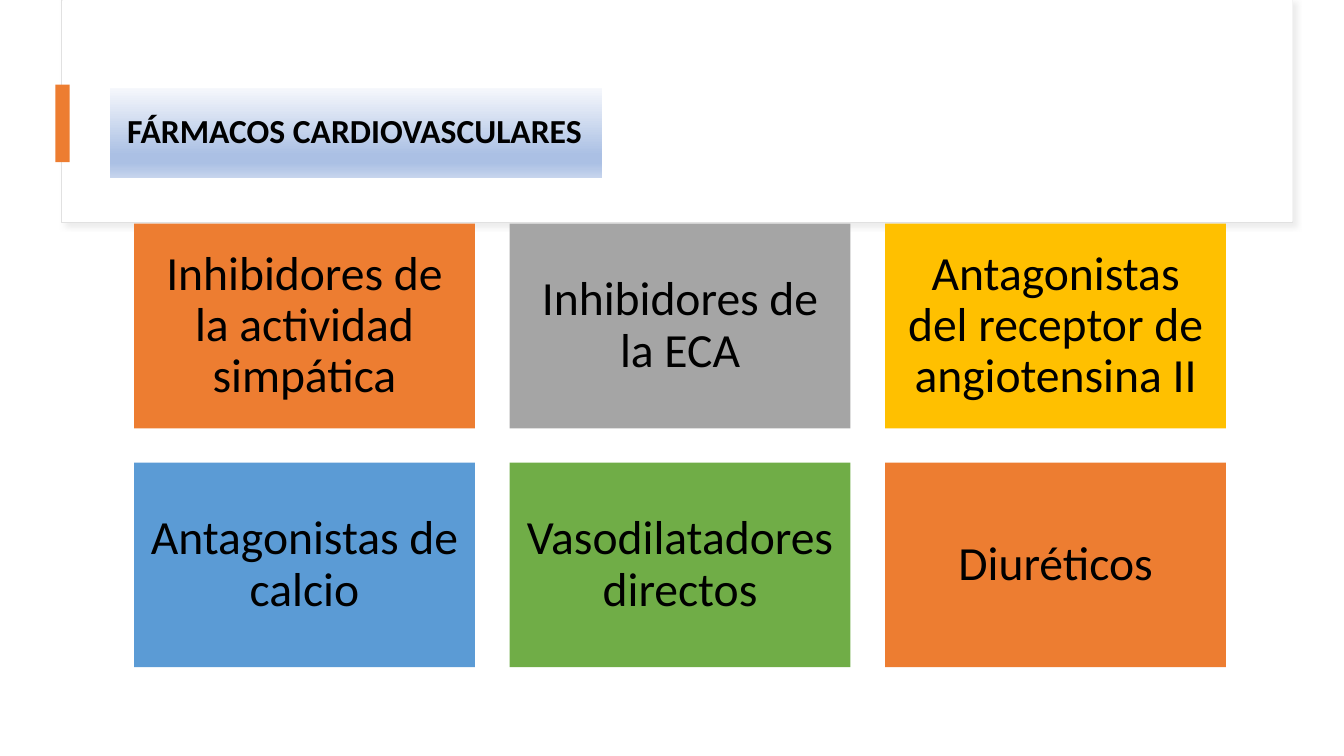
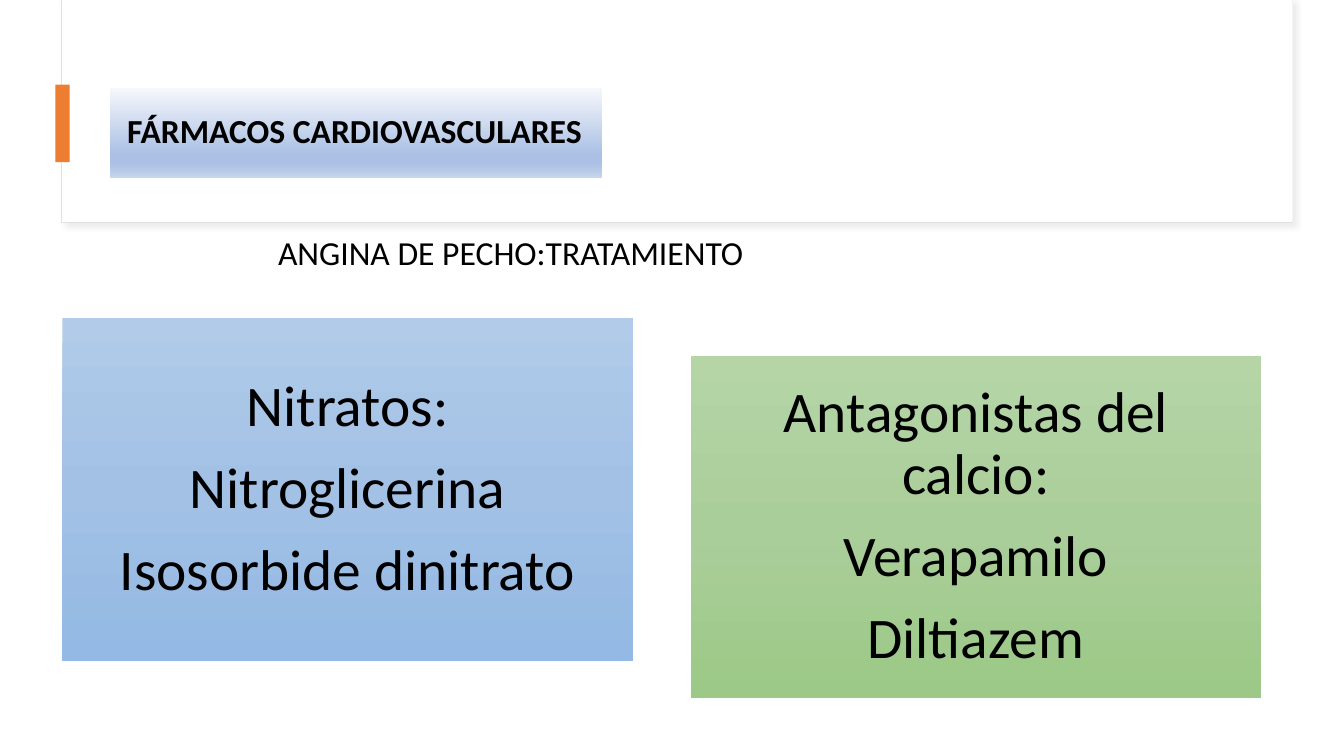
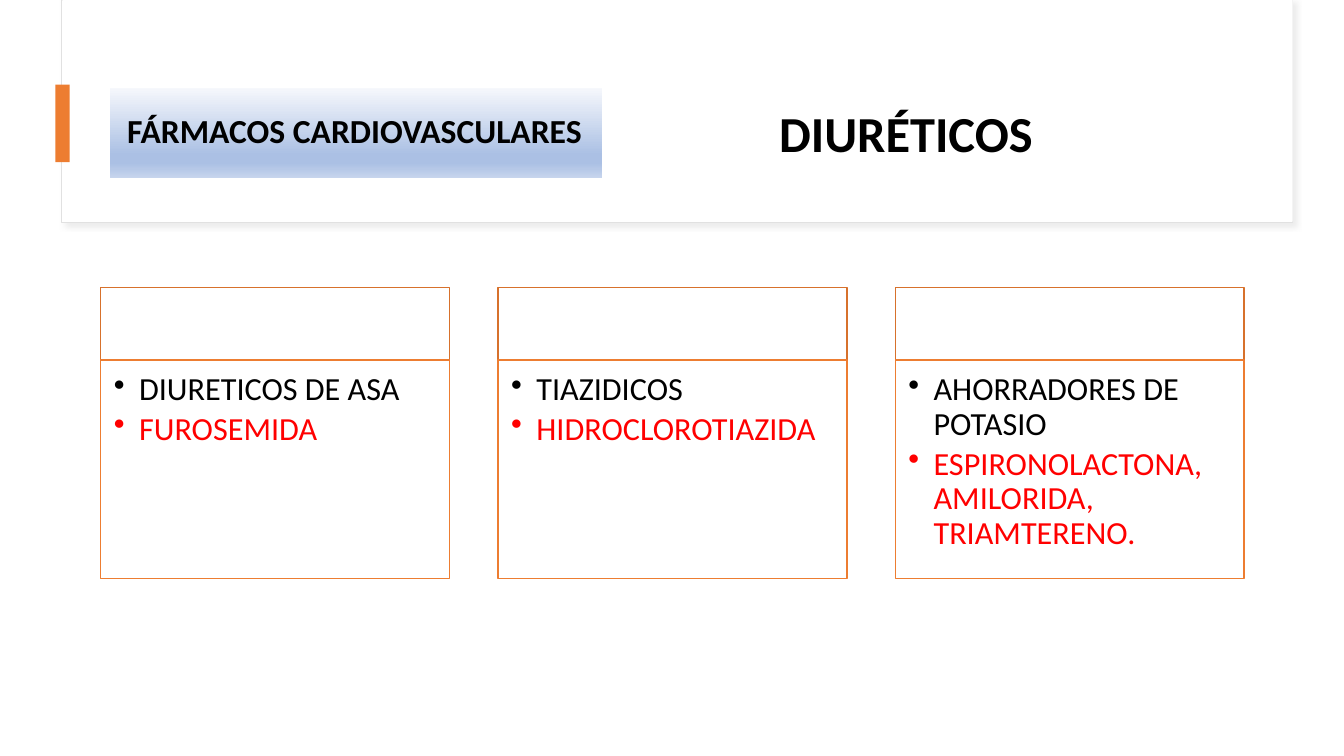
from dataclasses import dataclass
from itertools import cycle

from lxml import etree
from pptx import Presentation
from pptx import util as u
from pptx.dml.color import RGBColor
from pptx.enum import shapes, text
from pptx.oxml.ns import qn


@dataclass(frozen=True)
class Theme:
    font: str = "Calibri"
    black: str = "000000"
    white: str = "FFFFFF"
    red: str = "FF0000"
    orange: str = "ED7D31"
    rust: str = "D7712C"
    gray: str = "A5A5A5"
    gold: str = "FFC000"
    blue: str = "5B9BD5"
    green: str = "70AD47"
    band_line: str = "E1E1E1"
    band_shadow: str = "D9D9D9"
    # Gradients run from top to bottom as (percent, colour)
    title_fade: tuple = ((0, "F6F8FC"), (74, "ABC0E4"), (83, "ABC0E4"), (100, "C7D5ED"))
    blue_fade: tuple = ((0, "B1CBE9"), (50, "A3C1E5"), (100, "93B9E4"))
    green_fade: tuple = ((0, "B5D5A7"), (50, "AACE9A"), (100, "9CC987"))
    heading_size: int = 36
    label_size: int = 24
    tile_size: int = 34
    panel_size: int = 41
    list_size: int = 23


THEME = Theme()
LEFT, CENTER = text.PP_ALIGN.LEFT, text.PP_ALIGN.CENTER
TOP, MIDDLE = text.MSO_ANCHOR.TOP, text.MSO_ANCHOR.MIDDLE


def spread(first, last, count):
    """Evenly spaced positions from first to last."""
    return [first + (last - first) * i / (count - 1) for i in range(count)]


def write(frame, content, size=THEME.label_size, colors=(THEME.black,), bold=False,
          align=LEFT, anchor=TOP, insets=(0.1, 0.05, 0.1, 0.05),
          spacing=1.0, after=0, bullet=None):
    """Fill a frame, one paragraph per line; after is a share of the type size."""
    frame.word_wrap = True
    frame.vertical_anchor = anchor
    (frame.margin_left, frame.margin_top,
     frame.margin_right, frame.margin_bottom) = map(u.Inches, insets)
    for index, (line, color) in enumerate(zip(content.split("\n"), cycle(colors))):
        para = frame.add_paragraph() if index else frame.paragraphs[0]
        para.alignment = align
        para.line_spacing = spacing
        para.space_after = u.Pt(size * after)
        if bullet:
            props = para._p.get_or_add_pPr()
            props.set("marL", str(u.Inches(0.25)))
            props.set("indent", str(-u.Inches(0.25)))
            etree.SubElement(props, qn("a:buChar"), char=bullet)
        span = para.add_run()
        span.text = line
        span.font.name = THEME.font
        span.font.size = u.Pt(size)
        span.font.bold = bold
        span.font.color.rgb = RGBColor.from_string(color)


class Deck:
    def __init__(self, theme):
        self.theme = theme
        self.file = Presentation()
        self.file.slide_width = u.Inches(13.33)
        self.file.slide_height = u.Inches(7.5)
        self.page = None

    def new_page(self):
        """Start a slide with the shared header band and title."""
        t = self.theme
        self.page = self.file.slides.add_slide(self.file.slide_layouts[6])
        band = self.box(0.61, 0, 12.21, 2.21, t.white, line=t.band_line)
        self.cast_shadow(band)
        self.box(0.62, 0, 12.2, 2.2, t.white)
        title = self.box(1.09, 0.87, 4.88, 0.9, t.title_fade)
        write(title.text_frame, "FÁRMACOS CARDIOVASCULARES", bold=True,
              anchor=MIDDLE, spacing=0.9, insets=(0.17, 0.05, 0.1, 0.05))
        self.box(0.55, 0.84, 0.14, 0.77, t.orange)

    def box(self, left, top, width, height, fill, line=None):
        """Rectangle with a plain colour or a gradient given as stops."""
        box = self.page.shapes.add_shape(
            shapes.MSO_SHAPE.RECTANGLE, *map(u.Inches, (left, top, width, height)))
        box.shadow.inherit = False
        if isinstance(fill, str):
            box.fill.solid()
            box.fill.fore_color.rgb = RGBColor.from_string(fill)
        else:
            self.fade(box, fill)
        if line:
            box.line.color.rgb = RGBColor.from_string(line)
            box.line.width = u.Pt(1)
        else:
            box.line.fill.background()
        return box

    def fade(self, box, stops):
        box.fill.gradient()
        box.fill.gradient_angle = 270
        stop_list = box._element.spPr.find(qn("a:gradFill")).find(qn("a:gsLst"))
        for old in list(stop_list):
            stop_list.remove(old)
        for percent, color in stops:
            stop = etree.SubElement(stop_list, qn("a:gs"), pos=str(percent * 1000))
            etree.SubElement(stop, qn("a:srgbClr"), val=color)

    def cast_shadow(self, box):
        effects = box._element.spPr.find(qn("a:effectLst"))
        shadow = etree.SubElement(
            effects, qn("a:outerShdw"), blurRad=str(u.Pt(4)), dist=str(u.Pt(3)),
            dir=str(45 * 60000), algn="tl", rotWithShape="0")
        color = etree.SubElement(shadow, qn("a:srgbClr"), val=self.theme.band_shadow)
        etree.SubElement(color, qn("a:alpha"), val="50000")

    def label(self, left, top, width, height, content, **style):
        label = self.page.shapes.add_textbox(*map(u.Inches, (left, top, width, height)))
        write(label.text_frame, content, **style)

    def tile(self, left, top, width, height, fill, content, size, inset):
        tile = self.box(left, top, width, height, fill)
        write(tile.text_frame, content, size=size, align=CENTER, anchor=MIDDLE,
              insets=(inset,) * 4, spacing=0.9, after=0.35)

    def card(self, left, content):
        """Empty header above a bulleted list."""
        t = self.theme
        self.box(left, 2.85, 3.46, 0.72, t.white, line=t.rust)
        body = self.box(left, 3.57, 3.46, 2.17, t.white, line=t.orange)
        write(body.text_frame, content, size=t.list_size, colors=(t.black, t.red),
              insets=(0.13, 0.13, 0.18, 0.2), spacing=0.9, after=0.15, bullet="•")


def main():
    t = THEME
    deck = Deck(t)

    # Drug families
    deck.new_page()
    families = [
        ("Inhibidores de la actividad simpática", t.orange),
        ("Inhibidores de la ECA", t.gray),
        ("Antagonistas del receptor de angiotensina II", t.gold),
        ("Antagonistas de calcio", t.blue),
        ("Vasodilatadores directos", t.green),
        ("Diuréticos", t.orange),
    ]
    places = [(left, top) for top in (2.22, 4.59) for left in spread(1.33, 8.78, 3)]
    for (left, top), (family, color) in zip(places, families):
        deck.tile(left, top, 3.38, 2.03, color, family, t.tile_size, 0.14)

    # Angina treatment
    deck.new_page()
    deck.label(2.66, 2.25, 6.17, 0.5, "ANGINA DE PECHO:TRATAMIENTO")
    treatments = [
        (0.62, 3.16, t.blue_fade, "Nitratos:\nNitroglicerina\nIsosorbide dinitrato"),
        (6.85, 3.53, t.green_fade, "Antagonistas del calcio:\nVerapamilo\nDiltiazem"),
    ]
    for left, top, stops, drugs in treatments:
        deck.tile(left, top, 5.66, 3.4, stops, drugs, t.panel_size, 0.17)

    # Diuretics
    deck.new_page()
    diuretics = [
        "DIURETICOS DE ASA\nFUROSEMIDA",
        "TIAZIDICOS\nHIDROCLOROTIAZIDA",
        "AHORRADORES DE POTASIO\nESPIRONOLACTONA, AMILORIDA, TRIAMTERENO.",
    ]
    for left, drugs in zip(spread(1, 8.88, 3), diuretics):
        deck.card(left, drugs)
    deck.label(7.63, 0.96, 3.97, 0.71, "DIURÉTICOS", size=t.heading_size, bold=True)

    deck.file.save("out.pptx")


if __name__ == "__main__":
    main()
